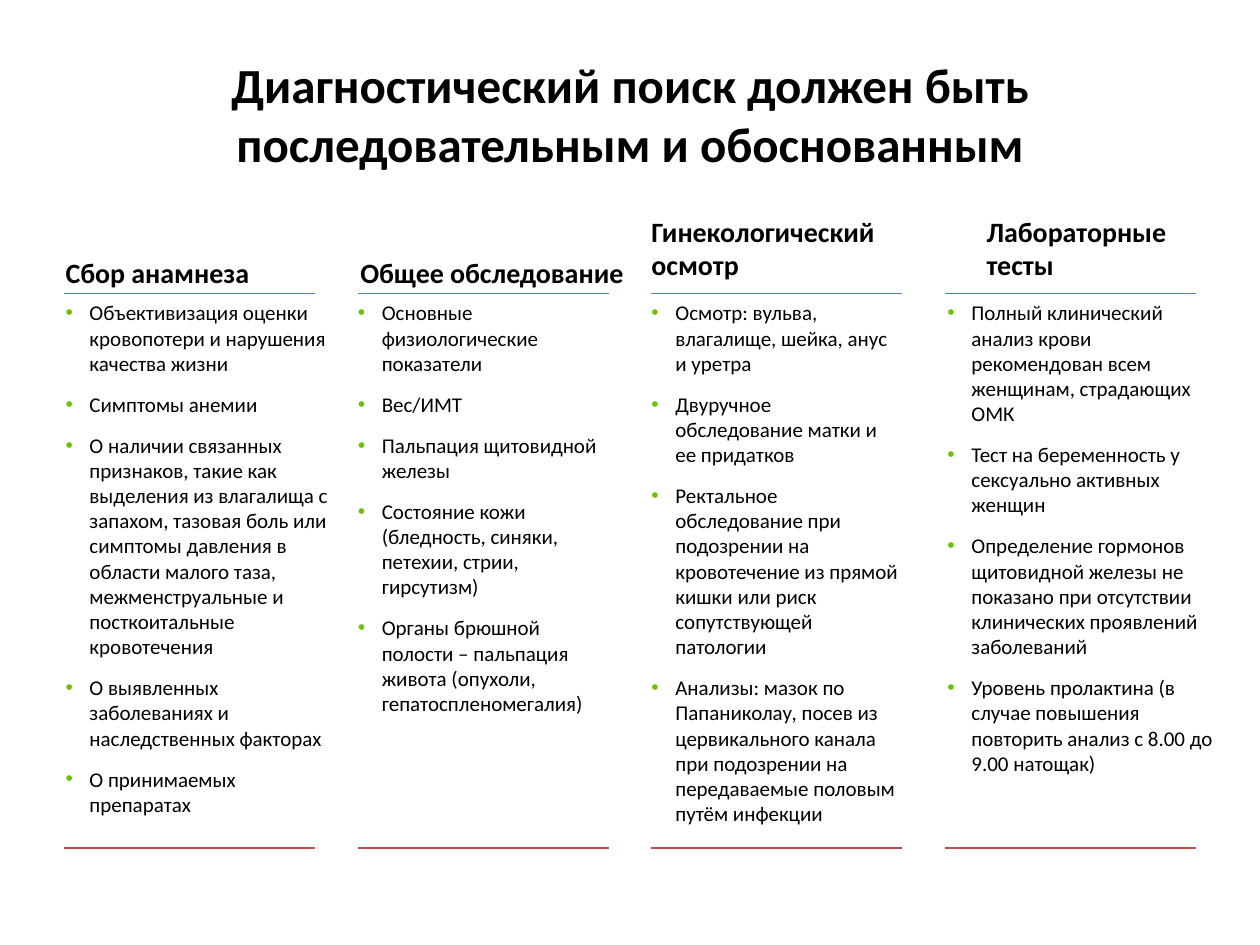
from lxml import etree
from pptx import Presentation
from pptx.dml.color import RGBColor
from pptx.enum.shapes import MSO_CONNECTOR
from pptx.enum.text import MSO_ANCHOR, MSO_AUTO_SIZE, PP_ALIGN
from pptx.oxml.ns import qn
from pptx.util import Inches, Pt

STRAIGHT = MSO_CONNECTOR.STRAIGHT
MIDDLE = MSO_ANCHOR.MIDDLE
NO_FIT = MSO_AUTO_SIZE.NONE
CENTER = PP_ALIGN.CENTER

FONT = "Calibri"
BLACK, BLUE, RED, GREEN = "000000", "4F81BD", "C0504D", "6BC200"

TITLE = "Диагностический поиск должен быть последовательным и обоснованным"
COLUMNS = [
    {
        "heading": "Сбор анамнеза",
        "heading_at": (0.52, 2.03, 1.98, 0.3),
        "list_at": (0.52, 2.26, 2.12, 4.44),
        "items": [
            "Объективизация оценки кровопотери и нарушения качества жизни",
            "Симптомы анемии",
            "О наличии связанных признаков, такие как выделения из влагалища с запахом, "
            "тазовая боль или симптомы давления в области малого таза, "
            "межменструальные и посткоитальные кровотечения",
            "О выявленных заболеваниях и наследственных факторах",
            "О принимаемых препаратах",
        ],
    },
    {
        "heading": "Общее обследование",
        "heading_at": (2.86, 2.03, 2.14, 0.3),
        "list_at": (2.84, 2.26, 1.99, 4.44),
        "items": [
            "Основные физиологические показатели",
            "Вес/ИМТ",
            "Пальпация щитовидной железы",
            "Состояние кожи (бледность, синяки, петехии, стрии, гирсутизм)",
            "Органы брюшной полости – пальпация живота (опухоли, гепатоспленомегалия)",
        ],
    },
    {
        "heading": "Гинекологический осмотр",
        "heading_at": (5.17, 1.7, 2.51, 0.63),
        "list_at": (5.17, 2.26, 1.99, 4.44),
        "items": [
            "Осмотр: вульва, влагалище, шейка, анус и уретра",
            "Двуручное обследование матки и ее придатков",
            "Ректальное обследование при подозрении на кровотечение из прямой кишки "
            "или риск сопутствующей патологии",
            "Анализы: мазок по Папаниколау, посев из цервикального канала "
            "при подозрении на передаваемые половым путём инфекции",
        ],
    },
    {
        "heading": "Лабораторные тесты",
        "heading_at": (7.83, 1.7, 1.99, 0.62),
        "list_at": (7.52, 2.26, 2.13, 4.44),
        "items": [
            "Полный клинический анализ крови рекомендован всем женщинам, страдающих ОМК",
            "Тест на беременность у сексуально активных женщин",
            "Определение гормонов щитовидной железы не показано "
            "при отсутствии клинических проявлений заболеваний",
            "Уровень пролактина (в случае повышения повторить анализ с 8.00 до 9.00 натощак)",
        ],
    },
]
RULE_LEFT, RULE_WIDTH, RULE_PITCH = 0.51, 1.99, 2.33
RULES = [(2.33, BLUE), (6.73, RED)]
INDENT = 0.19


def color(value):
    return RGBColor.from_string(value)


def set_font(para, size, bold=False):
    para.font.name = FONT
    para.font.size = Pt(size)
    para.font.bold = bold
    para.font.color.rgb = color(BLACK)


def add_bullet(para):
    props = para._p.get_or_add_pPr()
    props.set("marL", str(Inches(INDENT)))
    props.set("indent", str(-Inches(INDENT)))
    bullet_color = etree.SubElement(props, qn("a:buClr"))
    etree.SubElement(bullet_color, qn("a:srgbClr"), val=GREEN)
    etree.SubElement(props, qn("a:buFont"), typeface="Arial")
    etree.SubElement(props, qn("a:buChar"), char="•")


def add_text(page, place, lines, size, top=0, bottom=0, bold=False, bulleted=False):
    frame = page.shapes.add_textbox(*map(Inches, place)).text_frame
    frame.word_wrap = True
    frame.margin_left = frame.margin_right = 0
    frame.margin_top, frame.margin_bottom = Inches(top), Inches(bottom)
    frame.text = "\n".join(lines)
    for para in frame.paragraphs:
        para.space_before, para.space_after = Pt(3), Pt(6)
        if bulleted:
            add_bullet(para)
        set_font(para, size, bold)


def add_rule(page, left, y, line_color):
    rule = page.shapes.add_connector(
        STRAIGHT, Inches(left), Inches(y), Inches(left + RULE_WIDTH), Inches(y)
    )
    rule.line.color.rgb = color(line_color)
    rule.line.width = Pt(0.75)
    etree.SubElement(rule._element.spPr, qn("a:effectLst"))


def add_title(page):
    title = page.shapes.title
    title.left, title.top, title.width, title.height = map(Inches, (0.51, 0.38, 8.98, 1.04))
    frame = title.text_frame
    frame.text = TITLE
    frame.auto_size = NO_FIT
    frame.vertical_anchor = MIDDLE
    para = frame.paragraphs[0]
    para.alignment = CENTER
    set_font(para, 28, bold=True)


def main():
    deck = Presentation()
    deck.slide_width, deck.slide_height = Inches(10), Inches(7.5)
    page = deck.slides.add_slide(deck.slide_layouts.get_by_name("Title Only"))
    add_title(page)
    for index, column in enumerate(COLUMNS):
        for y, line_color in RULES:
            add_rule(page, RULE_LEFT + index * RULE_PITCH, y, line_color)
        add_text(page, column["heading_at"], [column["heading"]], 16, bottom=0.04, bold=True)
        add_text(page, column["list_at"], column["items"], 12, top=0.12, bulleted=True)
    deck.save("out.pptx")


if __name__ == "__main__":
    main()
